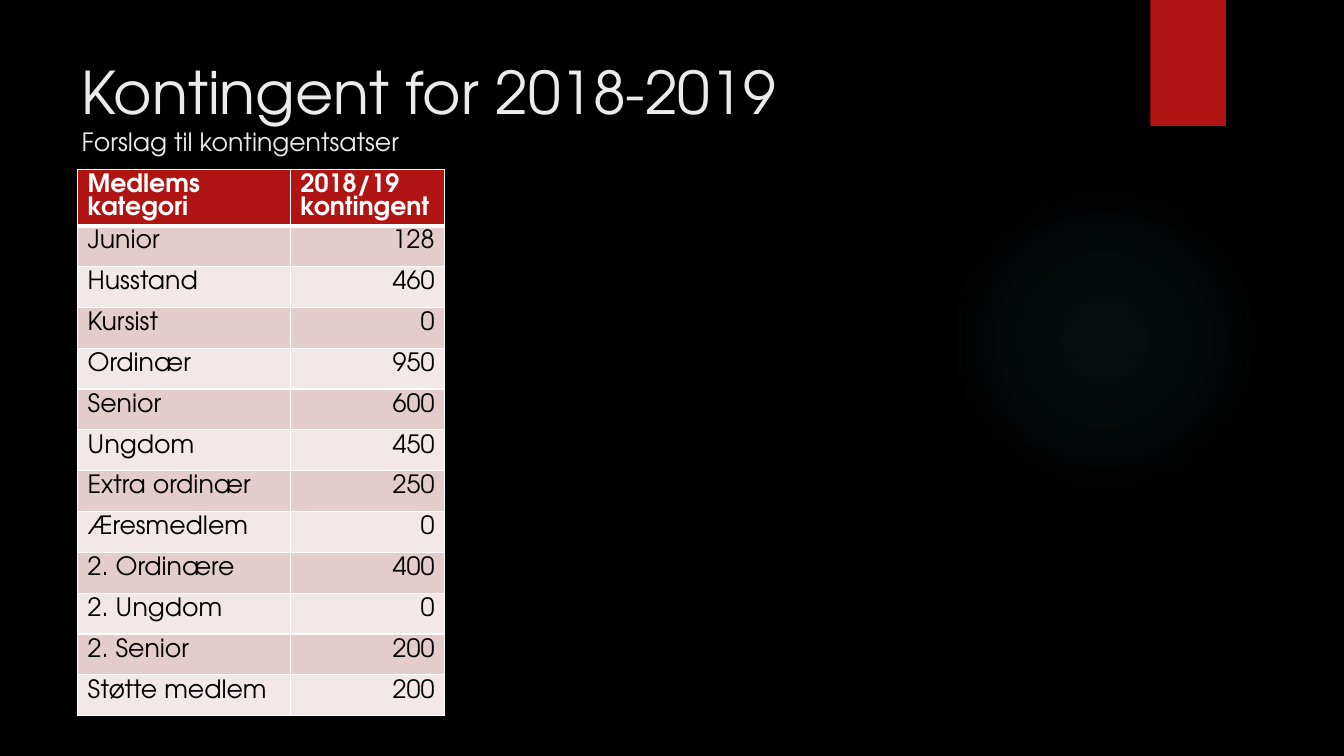
from typing import NamedTuple

from lxml import etree
from pptx import Presentation, util as u
from pptx.dml.color import RGBColor
from pptx.enum import shapes, text
from pptx.oxml import ns

FONT = "TeX Gyre Adventor"
BLACK = RGBColor(0x00, 0x00, 0x00)
WHITE = RGBColor(0xFF, 0xFF, 0xFF)
PALE = RGBColor(0xEB, 0xEB, 0xEB)
RED = RGBColor(0xB0, 0x15, 0x13)
TEAL = RGBColor(0x50, 0xB9, 0xC1)
BAND_DARK = RGBColor(0xE4, 0xCC, 0xCC)
BAND_LIGHT = RGBColor(0xF2, 0xE8, 0xE7)
GLOW_STOPS = [(0, 7), (36, 6), (69, 0)]  # position and opacity in percent


class Fee(NamedTuple):
    category: str
    amount: str


HEADER = Fee("Medlems kategori", "2018/19 kontingent")
FEES = [
    Fee("Junior", "128"),
    Fee("Husstand", "460"),
    Fee("Kursist", "0"),
    Fee("Ordinær", "950"),
    Fee("Senior", "600"),
    Fee("Ungdom", "450"),
    Fee("Extra ordinær", "250"),
    Fee("Æresmedlem", "0"),
    Fee("2. Ordinære", "400"),
    Fee("2. Ungdom", "0"),
    Fee("2. Senior", "200"),
    Fee("Støtte medlem", "200"),
]


def add_child(parent, tag: str, **attributes):
    return etree.SubElement(parent, ns.qn(tag), attributes)


def add_decoration(slide, kind, left: float, top: float, width: float, height: float):
    shape = slide.shapes.add_shape(
        kind, u.Inches(left), u.Inches(top), u.Inches(width), u.Inches(height))
    shape.shadow.inherit = False
    shape.line.fill.background()
    return shape


def fill_with_glow(shape) -> None:
    shape.fill.gradient()
    gradient = shape.fill._xPr.find(ns.qn("a:gradFill"))
    for child in list(gradient):
        gradient.remove(child)
    stops = add_child(gradient, "a:gsLst")
    for position, opacity in GLOW_STOPS:
        stop = add_child(stops, "a:gs", pos=str(position * 1000))
        color = add_child(stop, "a:srgbClr", val=str(TEAL))
        add_child(color, "a:alpha", val=str(opacity * 1000))
    circle = add_child(gradient, "a:path", path="circle")
    add_child(circle, "a:fillToRect", l="50000", t="50000", r="50000", b="50000")


def format_run(run, size: float, color: RGBColor, bold: bool = False) -> None:
    run.font.name = FONT
    run.font.size = u.Pt(size)
    run.font.color.rgb = color
    run.font.bold = bold


def add_borders(cell, top: float, bottom: float) -> None:
    properties = cell._tc.get_or_add_tcPr()
    for side, width in (("L", 1), ("R", 1), ("T", top), ("B", bottom)):
        line = add_child(properties, f"a:ln{side}", w=str(u.Pt(width)))
        solid = add_child(line, "a:solidFill")
        add_child(solid, "a:srgbClr", val=str(WHITE))


def fill_row(table, row: int, fee: Fee) -> None:
    is_header = row == 0
    band = BAND_DARK if row % 2 else BAND_LIGHT
    for column, wording in enumerate(fee):
        cell = table.cell(row, column)
        add_borders(cell, top=3 if row == 1 else 1, bottom=3 if is_header else 1)
        cell.fill.solid()
        cell.fill.fore_color.rgb = RED if is_header else band
        cell.text_frame.text = wording
        paragraph = cell.text_frame.paragraphs[0]
        paragraph.line_spacing = u.Pt(16.5)
        if column == 1 and not is_header:
            paragraph.alignment = text.PP_ALIGN.RIGHT
        format_run(paragraph.runs[0], 18, WHITE if is_header else BLACK, is_header)


def main() -> None:
    prs = Presentation()
    prs.slide_width, prs.slide_height = u.Inches(13.33), u.Inches(7.5)
    slide = prs.slides.add_slide(prs.slide_layouts[5])
    slide.background.fill.solid()
    slide.background.fill.fore_color.rgb = BLACK

    # Background glow and red tab
    glow = add_decoration(slide, shapes.MSO_SHAPE.OVAL, 9.41, 1.83, 3.08, 3.08)
    fill_with_glow(glow)
    red_tab = add_decoration(slide, shapes.MSO_SHAPE.RECTANGLE, 11.41, 0, 0.75, 1.25)
    red_tab.fill.solid()
    red_tab.fill.fore_color.rgb = RED

    # Title with its smaller second line
    title = slide.shapes.title
    title.left, title.top = u.Inches(0.71), u.Inches(0.5)
    title.width, title.height = u.Inches(10.29), u.Inches(1.53)
    frame = title.text_frame
    frame.text = "Kontingent for 2018-2019\vForslag til kontingentsatser"
    frame.word_wrap = True
    frame.auto_size = text.MSO_AUTO_SIZE.NONE
    frame.vertical_anchor = text.MSO_ANCHOR.TOP
    heading = frame.paragraphs[0]
    heading.alignment = text.PP_ALIGN.LEFT
    for run, size in zip(heading.runs, (42, 18)):
        format_run(run, size, PALE)

    # Fee table
    rows = [HEADER, *FEES]
    fee_table = slide.shapes.add_table(
        len(rows), 2, u.Inches(0.77), u.Inches(1.68), u.Inches(3.64), u.Inches(5.27)).table
    fee_table.horz_banding = False
    for column, width in zip(fee_table.columns, (2.11, 1.53)):
        column.width = u.Inches(width)
    for row, fee in enumerate(rows):
        fill_row(fee_table, row, fee)

    prs.save("out.pptx")


if __name__ == "__main__":
    main()
